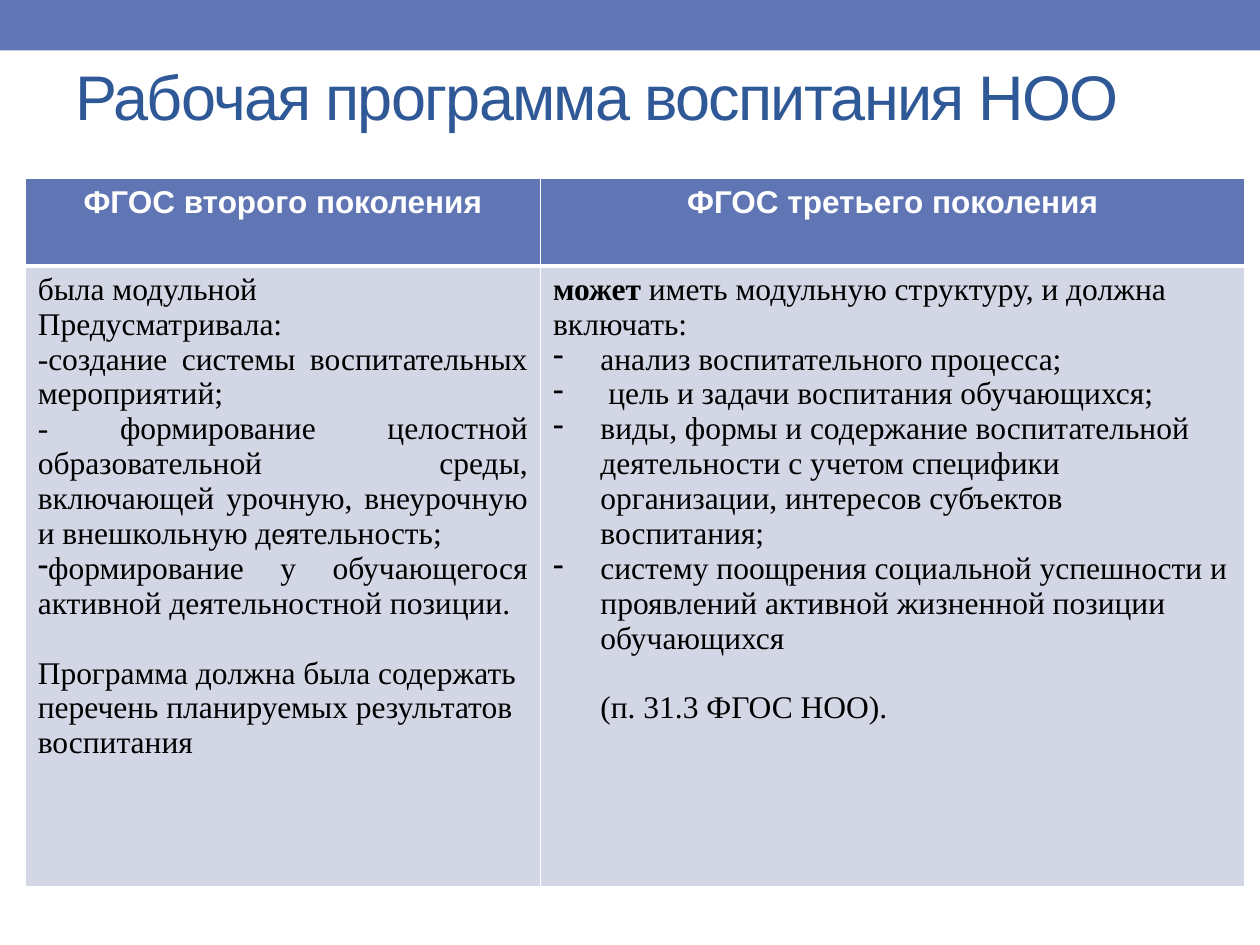
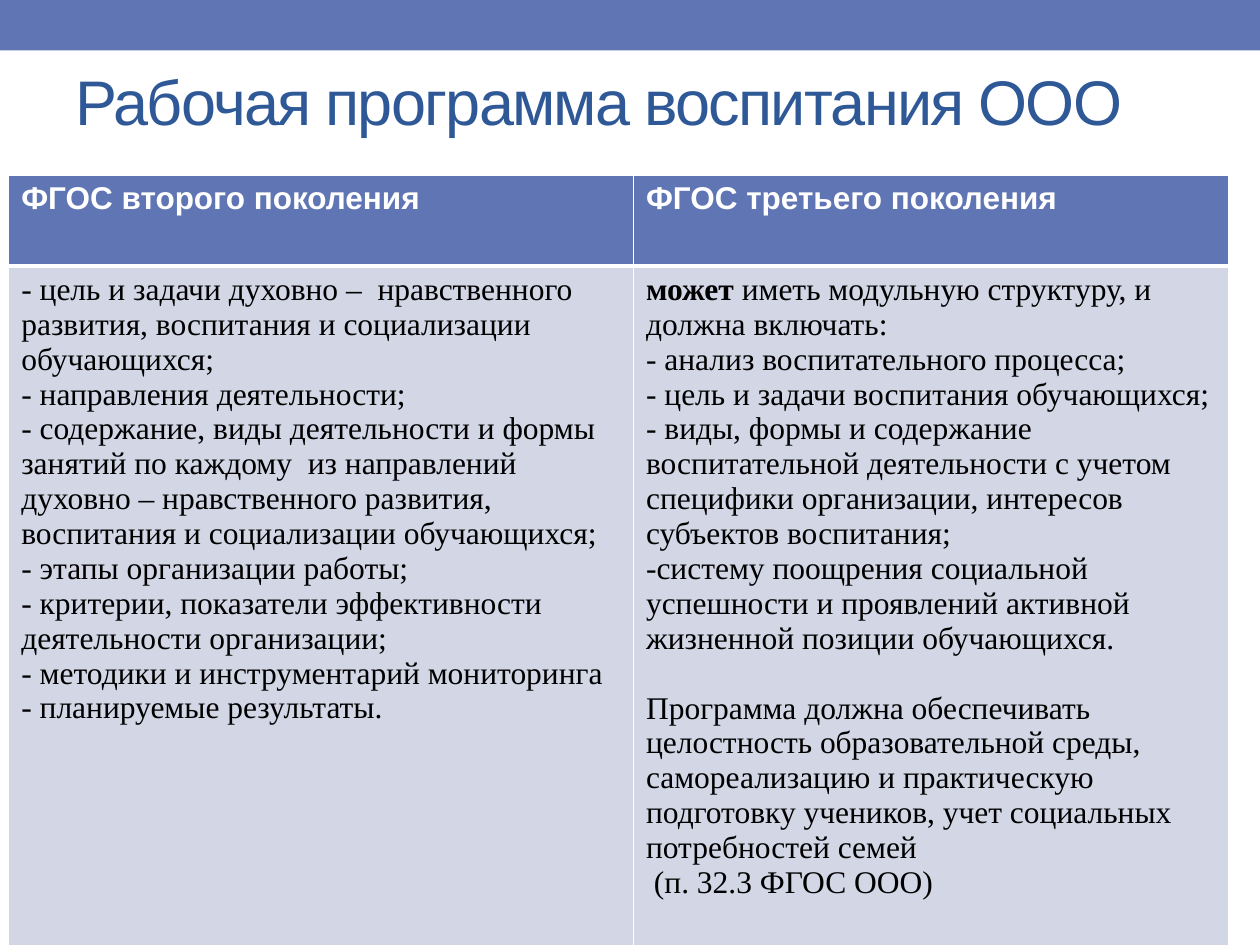
import pptx
import pptx.dml.color
import pptx.enum.shapes
import pptx.enum.text
import pptx.oxml.ns
import pptx.util
from lxml import etree

Pt = pptx.util.Pt
ALIGN = pptx.enum.text.PP_ALIGN
QN = pptx.oxml.ns.qn

HUES = {"band": "6076B4", "title": "2F5897", "pale": "D2D6E5",
        "white": "FFFFFF", "ink": "000000"}
WIDE, HIGH = 720, 540
HANG = 27
GAP = 20
HEADS = ["ФГОС второго поколения", "ФГОС третьего поколения"]
ITEM = {"dash": True, "left": HANG, "hang": HANG}
JUST = {"align": ALIGN.JUSTIFY}
LEAD = ("иметь модульную структуру, и должна включать:", {"lead": "может "})

PRIMARY = [
    [
        ("была модульной", JUST),
        ("Предусматривала:", JUST),
        ("-создание системы воспитательных мероприятий;", JUST),
        ("- формирование целостной образовательной среды, включающей "
         "урочную, внеурочную и внешкольную деятельность;", JUST),
        ("формирование у обучающегося активной деятельностной позиции.",
         {"dash": True, **JUST}),
        ("Программа должна была содержать перечень планируемых "
         "результатов воспитания", {"gap": GAP}),
    ],
    [
        LEAD,
        ("анализ воспитательного процесса;", ITEM),
        (" цель и задачи воспитания обучающихся;", ITEM),
        ("виды, формы и содержание воспитательной деятельности с учетом "
         "специфики организации, интересов субъектов воспитания;", ITEM),
        ("систему поощрения социальной успешности и проявлений активной "
         "жизненной позиции обучающихся", ITEM),
        ("(п. 31.3 ФГОС НОО).", {"left": HANG, "gap": GAP}),
    ],
]

MIDDLE = [
    [
        ("- цель и задачи духовно –  нравственного развития, воспитания "
         "и социализации обучающихся;", {}),
        ("- направления деятельности;", {}),
        ("- содержание, виды деятельности и формы занятий по каждому  из "
         "направлений духовно – нравственного развития, воспитания и "
         "социализации обучающихся;", {}),
        ("- этапы организации работы;", {}),
        ("- критерии, показатели эффективности деятельности организации;", {}),
        ("- методики и инструментарий мониторинга", {}),
        ("- планируемые результаты.", {}),
    ],
    [
        LEAD,
        ("- анализ воспитательного процесса;", {}),
        ("- цель и задачи воспитания обучающихся;", {}),
        ("- виды, формы и содержание воспитательной деятельности с учетом "
         "специфики организации, интересов субъектов воспитания;", {}),
        ("-систему поощрения социальной успешности и проявлений активной "
         "жизненной позиции обучающихся.", {}),
        ("Программа должна обеспечивать целостность образовательной среды, "
         "самореализацию и практическую подготовку учеников, учет "
         "социальных потребностей семей", {"gap": GAP}),
        (" (п. 32.3 ФГОС ООО)", {}),
    ],
]


def tint(name):
    """Return the named colour."""
    return pptx.dml.color.RGBColor.from_string(HUES[name])


def write(frame, text, lead="", size=18, font="Times New Roman", hue="ink",
          bold=False, align=ALIGN.LEFT, gap=0, left=0, hang=0, dash=False,
          track=0):
    """Add one formatted paragraph, with an optional bold lead, to a frame."""
    para = frame.paragraphs[0]
    if para.runs:
        para = frame.add_paragraph()
    para.alignment = align
    para.space_before = Pt(gap)
    props = para._p.get_or_add_pPr()
    props.set("marL", str(Pt(left)))
    props.set("indent", str(Pt(-hang)))
    if dash:
        etree.SubElement(props, QN("a:buChar")).set("char", "-")
    for words, heavy in ((lead, True), (text, bold)):
        if not words:
            continue
        run = para.add_run()
        run.text = words
        run.font.size = Pt(size)
        run.font.name = font
        run.font.bold = heavy
        run.font.color.rgb = tint(hue)
        if track:
            run._r.get_or_add_rPr().set("spc", str(track * 100))


def edge(cell, **widths):
    """Draw white borders around a cell, 1 pt unless a side is given."""
    props = cell._tc.get_or_add_tcPr()
    for spot, side in enumerate("LRTB"):
        line = etree.Element(QN("a:ln" + side))
        line.set("w", str(Pt(widths.get(side, 1))))
        fill = etree.SubElement(line, QN("a:solidFill"))
        etree.SubElement(fill, QN("a:srgbClr")).set("val", HUES["white"])
        props.insert(spot, line)


def band(slide, box):
    """Draw the plain band at the top of a slide."""
    shape = slide.shapes.add_shape(
        pptx.enum.shapes.MSO_SHAPE.RECTANGLE, *map(Pt, box))
    shape.shadow.inherit = False
    shape.fill.solid()
    shape.fill.fore_color.rgb = tint("band")
    shape.line.fill.background()


def title(slide, box, text):
    """Place the slide title in its box."""
    frame = slide.shapes.add_textbox(*map(Pt, box)).text_frame
    frame.word_wrap = True
    frame.vertical_anchor = pptx.enum.text.MSO_ANCHOR.MIDDLE
    write(frame, text, size=36, font="Arial", hue="title", track=-1)


def table(slide, spot, cols, rows, body, align):
    """Place the two-column comparison with its header row."""
    box = (*spot, sum(cols), sum(rows))
    grid = slide.shapes.add_table(2, 2, *map(Pt, box)).table
    grid.first_row = grid.horz_banding = False
    for row, high in zip(grid.rows, rows):
        row.height = Pt(high)
    for col, wide in enumerate(cols):
        grid.columns[col].width = Pt(wide)
        head, cell = grid.cell(0, col), grid.cell(1, col)
        for part, hue in ((head, "band"), (cell, "pale")):
            part.fill.solid()
            part.fill.fore_color.rgb = tint(hue)
        edge(head, B=3)
        edge(cell, T=3)
        write(head.text_frame, HEADS[col], font="Arial", hue="white",
              bold=True, align=align)
        for text, style in body[col]:
            write(cell.text_frame, text, **style)


def page(deck, name, box, **parts):
    """Add one comparison slide."""
    slide = deck.slides.add_slide(deck.slide_layouts[6])
    band(slide, (0, 0, WIDE, 28.8))
    title(slide, box, name)
    table(slide, **parts)


def main():
    """Build and save the deck."""
    deck = pptx.Presentation()
    deck.slide_width, deck.slide_height = Pt(WIDE), Pt(HIGH)
    page(deck, "Рабочая программа воспитания НОО", (36, 26, 648, 57),
         spot=(14.4, 102), cols=(294.5, 402.5), rows=(50, 355),
         body=PRIMARY, align=ALIGN.CENTER)
    page(deck, "Рабочая программа воспитания ООО", (36, 26, 670, 63),
         spot=(5, 100), cols=(357, 340), rows=(52, 386),
         body=MIDDLE, align=ALIGN.LEFT)
    deck.save("out.pptx")


if __name__ == "__main__":
    main()
